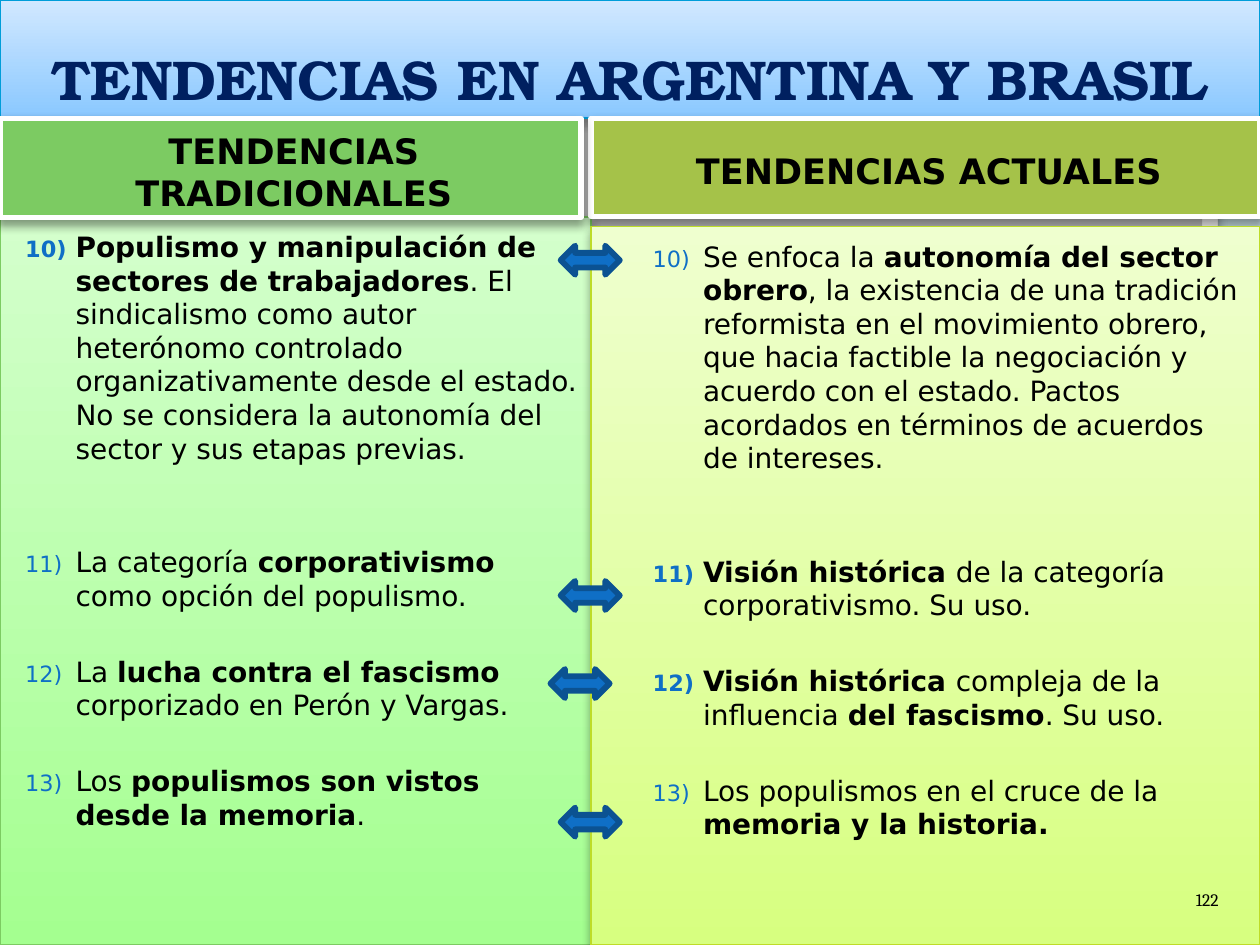
"""Builds a slide comparing traditional and current trends in Argentina and Brazil."""
from lxml import etree
from pptx import Presentation
from pptx.dml.color import RGBColor
from pptx.enum.shapes import MSO_SHAPE
from pptx.enum.text import MSO_ANCHOR, PP_ALIGN
from pptx.oxml.ns import qn
from pptx.util import Pt

RECT, ROUND, ARROW = MSO_SHAPE.RECTANGLE, MSO_SHAPE.ROUNDED_RECTANGLE, MSO_SHAPE.LEFT_RIGHT_ARROW
TOP, MIDDLE, BOTTOM = MSO_ANCHOR.TOP, MSO_ANCHOR.MIDDLE, MSO_ANCHOR.BOTTOM
LEFT, CENTER, RIGHT = PP_ALIGN.LEFT, PP_ALIGN.CENTER, PP_ALIGN.RIGHT
rgb = RGBColor.from_string


def add_box(s, kind, at, colors, line=None, width=0.75, shadow=False):
    """Add a shape with a plain or top-to-bottom gradient fill."""
    sp = s.shapes.add_shape(kind, *[Pt(v) for v in at])
    sp.shadow.inherit = False
    if len(colors) == 1:
        sp.fill.solid()
        sp.fill.fore_color.rgb = rgb(colors[0])
    else:
        sp.fill.gradient()
        sp.fill.gradient_angle = 270
        for stop, color in zip(sp.fill.gradient_stops, colors):
            stop.color.rgb = rgb(color)
    if line:
        sp.line.color.rgb = rgb(line)
        sp.line.width = Pt(width)
    else:
        sp.line.fill.background()
    if shadow:
        effects = sp._element.spPr.find(qn("a:effectLst"))
        outer = etree.SubElement(effects, qn("a:outerShdw"), blurRad="66040", dist="38100",
                                 dir="5400000", algn="ctr", rotWithShape="0")
        black = etree.SubElement(outer, qn("a:srgbClr"), val="000000")
        etree.SubElement(black, qn("a:alpha"), val="40000")
    return sp


def add_text(sp, paragraphs, size, font, color, anchor, align, insets):
    """Write paragraphs given as lists of (text, bold) runs."""
    tf = sp.text_frame
    tf.word_wrap = True
    tf.vertical_anchor = anchor
    tf.margin_left, tf.margin_top, tf.margin_right, tf.margin_bottom = [Pt(v) for v in insets]
    for i, runs in enumerate(paragraphs):
        p = tf.add_paragraph() if i else tf.paragraphs[0]
        p.alignment = align
        for text, bold in runs:
            r = p.add_run()
            r.text = text
            r.font.size, r.font.name, r.font.bold = Pt(size), font, bold
            r.font.color.rgb = rgb(color)
    return tf


SANS = "DejaVu Sans"
SPLIT = 337.7
GAPS = [2.5, 45.8, 24.1, 24.1]

traditional = [
    [("Populismo y manipulación de sectores de trabajadores", True),
     (". El sindicalismo como autor heterónomo controlado organizativamente desde el estado. "
      "No se considera la autonomía del sector y sus etapas previas.", False)],
    [("La categoría ", False), ("corporativismo", True), (" como opción del populismo.", False)],
    [("La ", False), ("lucha contra el fascismo ", True), ("corporizado en Perón y Vargas.", False)],
    [("Los ", False), ("populismos son vistos desde la memoria", True), (".", False)],
]
current = [
    [("Se enfoca la ", False), ("autonomía del sector obrero", True),
     (", la existencia de una tradición reformista en el movimiento obrero, que hacia factible "
      "la negociación y acuerdo con el estado. Pactos acordados en términos de acuerdos de "
      "intereses.", False)],
    [("Visión histórica ", True), ("de la categoría corporativismo. Su uso.", False)],
    [("Visión histórica ", True), ("compleja de la influencia ", False),
     ("del fascismo", True), (". Su uso.", False)],
    [("Los populismos en el cruce de la ", False), ("memoria y la historia.", True)],
]

prs = Presentation()
prs.slide_width, prs.slide_height = Pt(720), Pt(540)
s = prs.slides.add_slide(prs.slide_layouts[6])
fill = s.background.fill
fill.gradient()
fill.gradient_angle = 270
for stop, color in zip(fill.gradient_stops, ["E2FBFF", "869FA3"]):
    stop.color.rgb = rgb(color)

for at, color, line in [((24, 26, 672, 488), "FFFFFF", "A4A4A4"),
                        ((33, 34, 654, 432), "C5C5C5", None)]:
    sp = add_box(s, ROUND, at, [color], line, 0.16, shadow=bool(line))
    sp.adjustments[0] = 0.02

sp = add_box(s, RECT, (0, 0, 720, 67.5), ["D1E8FF", "8AC8FF"], "009DD9", shadow=True)
add_text(sp, [[("TENDENCIAS EN ARGENTINA Y BRASIL", True)]], 32, "TeX Gyre Bonum", "002060",
         BOTTOM, CENTER, (7.2, 3.6, 7.2, 3.6))

panels = [
    ((0, 124, SPLIT, 416), ["D4FFCC", "A4FF90"], "7CCB62", traditional, 28.8),
    ((SPLIT, 129.5, 720 - SPLIT, 410.5), ["EFFFCF", "D7FF80"], "BEDC28", current, 49.7),
]
headers = [
    ((0, 67.7, 332, 56.6), "7CCB62", "TENDENCIAS TRADICIONALES"),
    ((SPLIT, 67.7, 720 - SPLIT, 56), "A5C249", "TENDENCIAS ACTUALES"),
]
for (at, colors, line, items, indent), header in zip(panels, reversed(headers)):
    sp = add_box(s, RECT, at, colors, line, shadow=True)
    tf = add_text(sp, items, 16, SANS, "000000", TOP, LEFT, (14.4, 7.2, 7.2, 3.6))
    for p, gap in zip(tf.paragraphs, GAPS):
        p.space_before = Pt(gap)
        pPr = p._p.get_or_add_pPr()
        pPr.set("marL", str(Pt(indent)))
        pPr.set("indent", str(Pt(-28.8)))
        bullet = etree.SubElement(pPr, qn("a:buClr"))
        etree.SubElement(bullet, qn("a:srgbClr"), val="0F6FC6")
        etree.SubElement(pPr, qn("a:buSzPct"), val="80000")
        etree.SubElement(pPr, qn("a:buAutoNum"), type="arabicParenR", startAt="10")

    at, color, title = header
    sp = add_box(s, RECT, at, [color], "FFFFFF", 3, shadow=True)
    add_text(sp, [[(title, True)]], 20, SANS, "000000", MIDDLE, CENTER, (11, 7.2, 7.2, 3.6))

sp = s.shapes.add_textbox(Pt(657.4), Pt(489.6), Pt(46), Pt(33.8))
add_text(sp, [[("122", False)]], 10, "Cambria", "000000", BOTTOM, RIGHT, (7.2, 3.6, 7.2, 3.6))

for left, top in [(320.4, 140.4), (320.4, 332), (314.6, 382.3), (320.4, 461.5)]:
    add_box(s, ARROW, (left, top, 33.8, 16.6), ["0F6FC6"], "0B5292", 3.35)

prs.save("out.pptx")
